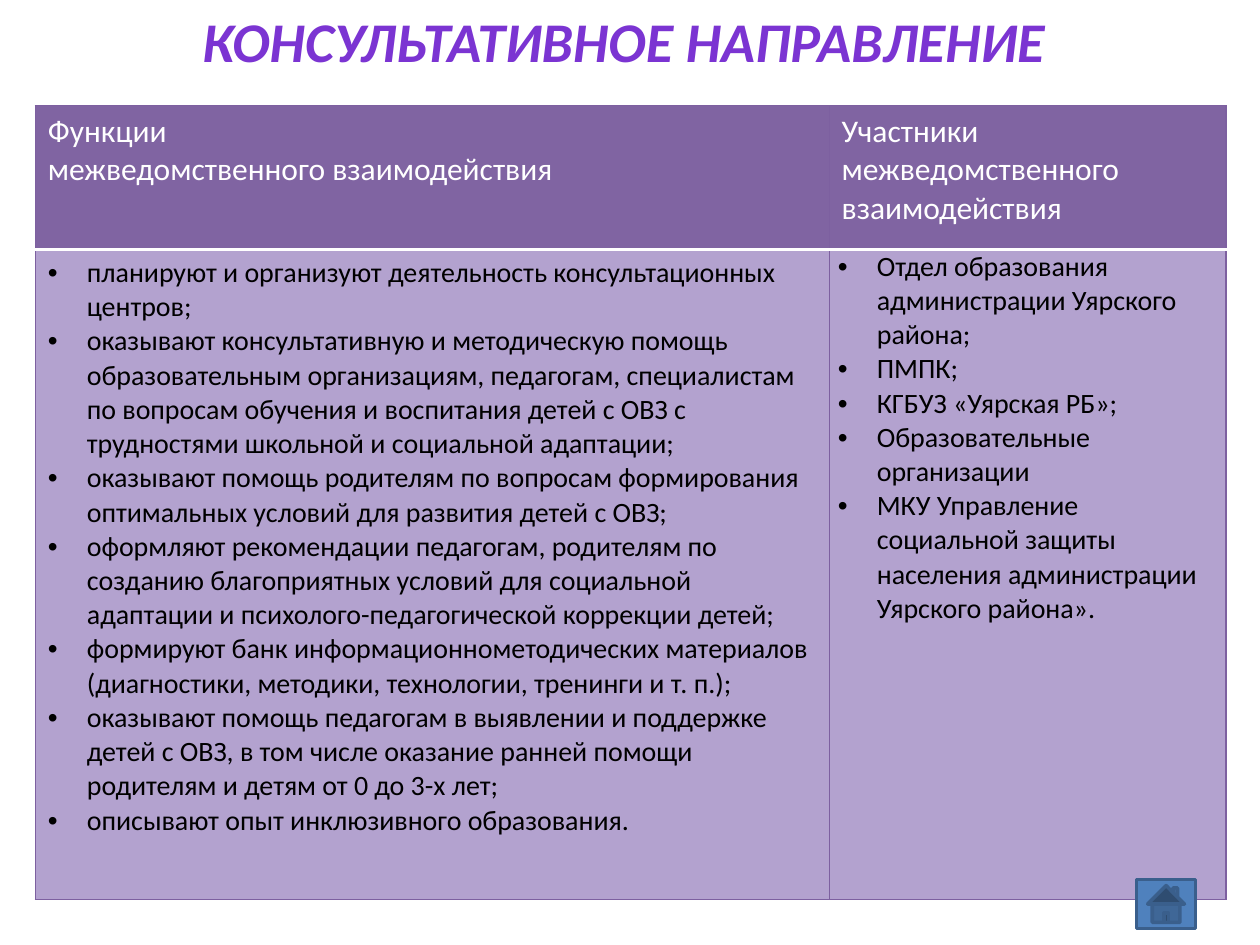
import pptx
import pptx.dml.color
import pptx.enum.shapes
import pptx.enum.text
import pptx.oxml
import pptx.oxml.ns
import pptx.util

Inches = pptx.util.Inches

THEME = {
    "font": "Calibri",
    "title": {"size": 32, "color": "7B34D2", "bold": True, "italic": True},
    "header": {"size": 18, "color": "FFFFFF", "bold": False},
    "body": {"size": 16, "color": "000000", "bold": False},
    "header_fill": "8064A2",
    "body_fill": "B3A2CF",
    "border": "7D60A0",
    "divider": "FFFFFF",
    "button_fill": "4F81BD",
    "button_line": "3A5F8C",
}

HEADERS = [
    ["Функции", "межведомственного взаимодействия"],
    ["Участники", "межведомственного взаимодействия"],
]
FUNCTIONS = [
    "планируют и организуют деятельность консультационных центров;",
    "оказывают консультативную и методическую помощь образовательным организациям, педагогам, "
    "специалистам по вопросам обучения и воспитания детей с ОВЗ с трудностями школьной и "
    "социальной адаптации;",
    "оказывают помощь родителям по вопросам формирования оптимальных условий для развития детей с ОВЗ;",
    "оформляют рекомендации педагогам, родителям по созданию благоприятных условий для социальной "
    "адаптации и психолого-педагогической коррекции детей;",
    "формируют банк информационнометодических материалов (диагностики, методики, технологии, "
    "тренинги и т. п.);",
    "оказывают помощь педагогам в выявлении и поддержке детей с ОВЗ, в том числе оказание ранней "
    "помощи родителям и детям от 0 до 3-х лет;",
    "описывают опыт инклюзивного образования.",
]
PARTICIPANTS = [
    "Отдел образования администрации Уярского района;",
    "ПМПК;",
    "КГБУЗ «Уярская РБ»;",
    "Образовательные организации",
    "МКУ Управление социальной защиты населения администрации Уярского района».",
]


def rgb(value):
    return pptx.dml.color.RGBColor.from_string(value)


def set_attributes(target, values):
    for name, value in values.items():
        setattr(target, name, value)


def add_run(paragraph, text, style):
    run = paragraph.add_run()
    run.text = text
    values = {name: value for name, value in style.items() if name != "color"}
    values.update(name=THEME["font"], size=pptx.util.Pt(style["size"]))
    set_attributes(run.font, values)
    run.font.color.rgb = rgb(style["color"])


def add_bullet(paragraph):
    properties = paragraph._p.get_or_add_pPr()
    properties.set("marL", str(Inches(0.31)))
    properties.set("indent", str(-Inches(0.31)))
    for tag, name, value in (("buFont", "typeface", "Arial"), ("buChar", "char", "•")):
        properties.append(pptx.oxml.parse_xml(
            f'<a:{tag} {pptx.oxml.ns.nsdecls("a")} {name}="{value}"/>'))


def add_border(cell, side, color, width):
    cell._tc.get_or_add_tcPr().append(pptx.oxml.parse_xml(
        f'<a:ln{side} {pptx.oxml.ns.nsdecls("a")} w="{pptx.util.Pt(width)}">'
        f'<a:solidFill><a:srgbClr val="{color}"/></a:solidFill></a:ln{side}>'))


def fill_cell(cell, lines, style, fill, divider_side, bulleted):
    for side in "LRTB":
        is_divider = side == divider_side
        add_border(cell, side, THEME["divider" if is_divider else "border"], 2 if is_divider else 0.75)
    cell.fill.solid()
    cell.fill.fore_color.rgb = rgb(fill)
    for index, line in enumerate(lines):
        frame = cell.text_frame
        paragraph = frame.add_paragraph() if index else frame.paragraphs[0]
        if bulleted:
            add_bullet(paragraph)
        add_run(paragraph, line, style)


def add_title(slide, text):
    title = slide.shapes.title
    set_attributes(title, {"left": Inches(1.42), "top": Inches(0),
                           "width": Inches(7.06), "height": Inches(0.64)})
    set_attributes(title.text_frame, {"word_wrap": False,
                                      "vertical_anchor": pptx.enum.text.MSO_ANCHOR.MIDDLE})
    paragraph = title.text_frame.paragraphs[0]
    paragraph.alignment = pptx.enum.text.PP_ALIGN.CENTER
    add_run(paragraph, text, THEME["title"])


def add_directions_table(slide):
    table = slide.shapes.add_table(2, 2, Inches(0.28), Inches(0.84), Inches(9.45), Inches(6.3)).table
    set_attributes(table, {"first_row": False, "horz_banding": False})
    for column, width in zip(table.columns, (6.3, 3.15)):
        column.width = Inches(width)
    for row, height in zip(table.rows, (1.14, 5.16)):
        row.height = Inches(height)
    for index, (header, items) in enumerate(zip(HEADERS, (FUNCTIONS, PARTICIPANTS))):
        fill_cell(table.cell(0, index), header, THEME["header"], THEME["header_fill"], "B", False)
        fill_cell(table.cell(1, index), items, THEME["body"], THEME["body_fill"], "T", True)
    set_attributes(table.cell(1, 1), {"margin_left": Inches(0.07), "margin_right": Inches(0.07),
                                      "margin_top": 0, "margin_bottom": 0})


def add_home_button(slide):
    button = slide.shapes.add_shape(pptx.enum.shapes.MSO_SHAPE.ACTION_BUTTON_HOME,
                                    Inches(9.02), Inches(6.98), Inches(0.47), Inches(0.39))
    button.shadow.inherit = False
    button.fill.solid()
    button.fill.fore_color.rgb = rgb(THEME["button_fill"])
    button.line.color.rgb = rgb(THEME["button_line"])
    button.line.width = pptx.util.Pt(2)


def main():
    presentation = pptx.Presentation()
    set_attributes(presentation, {"slide_width": Inches(10), "slide_height": Inches(7.5)})
    slide = presentation.slides.add_slide(presentation.slide_layouts[5])
    add_title(slide, "КОНСУЛЬТАТИВНОЕ НАПРАВЛЕНИЕ")
    add_directions_table(slide)
    add_home_button(slide)
    presentation.save("out.pptx")


if __name__ == "__main__":
    main()
